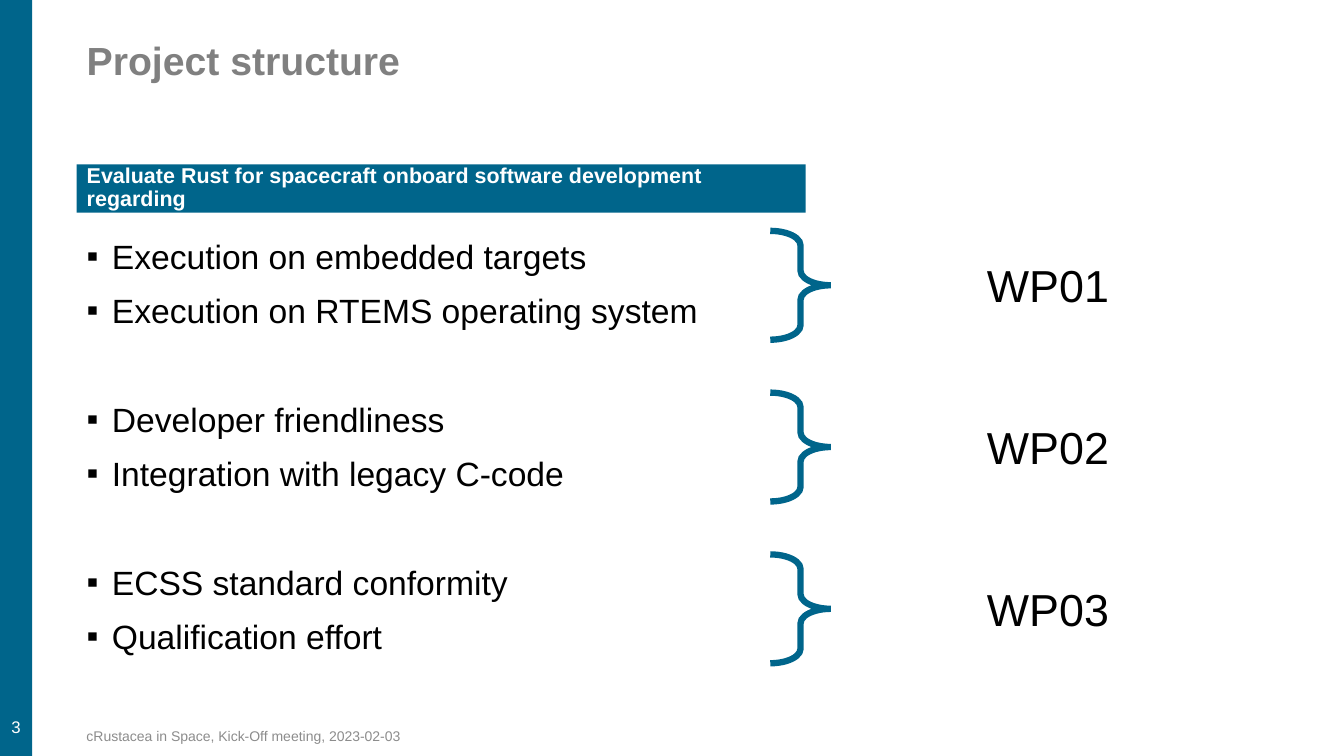
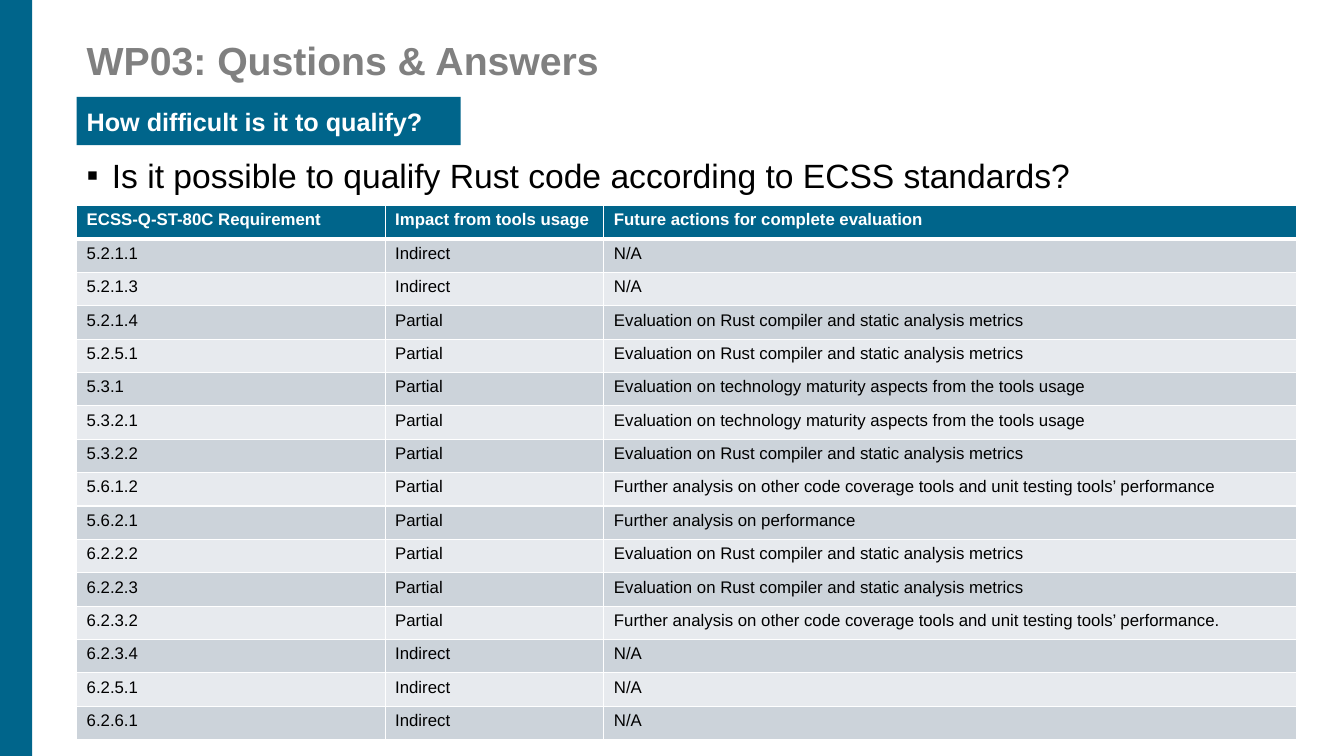
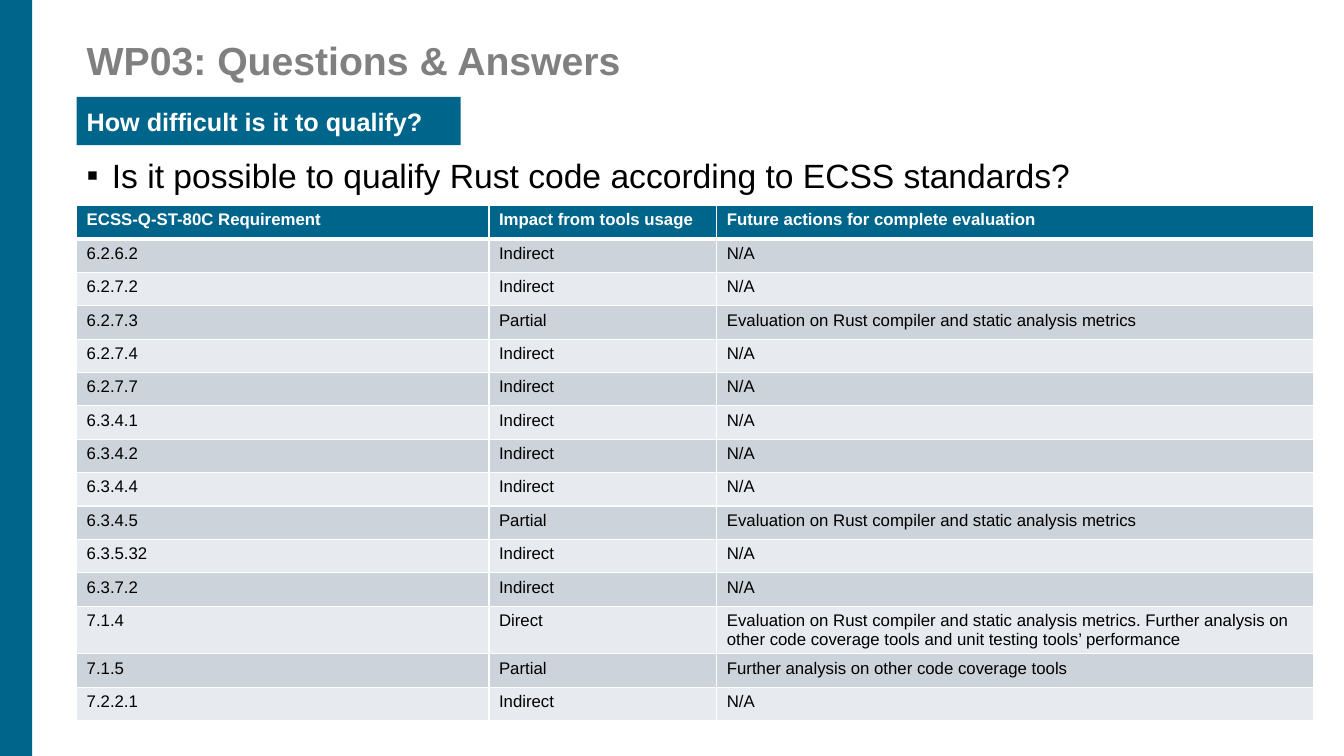
from dataclasses import dataclass

from lxml import etree
from pptx import Presentation
from pptx import util as u
from pptx.dml.color import RGBColor
from pptx.enum import shapes, text
from pptx.oxml.ns import qn


@dataclass(frozen=True)
class Theme:
    font: str = "Arial"
    # Colours
    accent: str = "00658B"
    title: str = "808080"
    footer: str = "8C8C8C"
    ink: str = "000000"
    white: str = "FFFFFF"
    rows: tuple = ("CCD3DA", "E7EAEE")
    # Type sizes in points
    title_size: float = 28
    label_size: float = 32
    list_size: float = 24
    banner_size: float = 18
    small_banner_size: float = 15.3
    cell_size: float = 12
    footer_size: float = 10
    # Layout in inches
    left: float = 0.76
    band_width: float = 0.32
    row_height: float = 5.3 / 16
    group_step: float = 3.21 / 2


T = Theme()

HEADERS = ("ECSS-Q-ST-80C Requirement", "Impact from tools usage",
           "Future actions for complete evaluation")
NONE = "N/A"
METRICS = "Evaluation on Rust compiler and static analysis metrics"
MATURITY = "Evaluation on technology maturity aspects from the tools usage"
COVERAGE = "Further analysis on other code coverage tools"
TESTING = COVERAGE + " and unit testing tools’ performance"

ROWS_FIRST = [
    ("5.2.1.1", "Indirect", NONE),
    ("5.2.1.3", "Indirect", NONE),
    ("5.2.1.4", "Partial", METRICS),
    ("5.2.5.1", "Partial", METRICS),
    ("5.3.1", "Partial", MATURITY),
    ("5.3.2.1", "Partial", MATURITY),
    ("5.3.2.2", "Partial", METRICS),
    ("5.6.1.2", "Partial", TESTING),
    ("5.6.2.1", "Partial", "Further analysis on performance"),
    ("6.2.2.2", "Partial", METRICS),
    ("6.2.2.3", "Partial", METRICS),
    ("6.2.3.2", "Partial", TESTING + "."),
    ("6.2.3.4", "Indirect", NONE),
    ("6.2.5.1", "Indirect", NONE),
    ("6.2.6.1", "Indirect", NONE),
]
ROWS_SECOND = [
    ("6.2.6.2", "Indirect", NONE),
    ("6.2.7.2", "Indirect", NONE),
    ("6.2.7.3", "Partial", METRICS),
    ("6.2.7.4", "Indirect", NONE),
    ("6.2.7.7", "Indirect", NONE),
    ("6.3.4.1", "Indirect", NONE),
    ("6.3.4.2", "Indirect", NONE),
    ("6.3.4.4", "Indirect", NONE),
    ("6.3.4.5", "Partial", METRICS),
    ("6.3.5.32", "Indirect", NONE),
    ("6.3.7.2", "Indirect", NONE),
    ("7.1.4", "Direct", METRICS + ". " + TESTING),
    ("7.1.5", "Partial", COVERAGE),
    ("7.2.2.1", "Indirect", NONE),
]
WORK_PACKAGES = [
    ("WP01", ("Execution on embedded targets",
              "Execution on RTEMS operating system")),
    ("WP02", ("Developer friendliness", "Integration with legacy C-code")),
    ("WP03", ("ECSS standard conformity", "Qualification effort")),
]


# Basic helpers
def rgb(color):
    return RGBColor.from_string(color)


def box(*lengths):
    return [u.Inches(n) for n in lengths]


def place(sp, *lengths):
    sp.left, sp.top, sp.width, sp.height = box(*lengths)


def fill(target, color):
    target.fill.solid()
    target.fill.fore_color.rgb = rgb(color)


def write(p, string, *, size, color=T.ink, bold=False, align="LEFT",
          before=0, line=1.0, bullet=None):
    """Format a paragraph and add its text."""
    indent = u.Inches(0.25) if bullet else 0
    pPr = p._p.get_or_add_pPr()
    pPr.set("marL", str(indent))
    pPr.set("indent", str(-indent))
    p.alignment = getattr(text.PP_ALIGN, align)
    p.space_before = u.Pt(before)
    p.line_spacing = line
    if bullet:
        etree.SubElement(pPr, qn("a:buFont")).set("typeface", T.font)
        etree.SubElement(pPr, qn("a:buChar")).set("char", bullet)
    else:
        etree.SubElement(pPr, qn("a:buNone"))
    r = p.add_run()
    r.text = string
    r.font.name, r.font.size, r.font.bold = T.font, u.Pt(size), bold
    r.font.color.rgb = rgb(color)


def frame(sp, anchor="TOP"):
    tf = sp.text_frame
    tf.auto_size = text.MSO_AUTO_SIZE.NONE
    tf.word_wrap = True
    tf.vertical_anchor = getattr(text.MSO_ANCHOR, anchor)
    return tf


# Elements
def add_label(s, string, at, anchor="TOP", **fmt):
    tf = frame(s.shapes.add_textbox(*box(*at)), anchor)
    write(tf.paragraphs[0], string, **fmt)
    return tf


def add_band(s):
    """Draw the side band behind everything else on the slide."""
    sp = s.shapes.add_shape(shapes.MSO_SHAPE.RECTANGLE,
                            *box(0, 0, T.band_width, 7.5))
    sp.shadow.inherit = False
    fill(sp, T.accent)
    sp.line.fill.background()
    s.shapes.element.insert(2, sp.element)


def add_slide(prs, title):
    s = prs.slides.add_slide(prs.slide_layouts.get_by_name("Two Content"))
    add_band(s)
    sp = s.shapes.title
    place(sp, T.left, 0.36, 11, 1.08)
    write(frame(sp).paragraphs[0], title, size=T.title_size, color=T.title,
          bold=True, line=0.9)
    return s


def set_banner(s, string, top, width, size, line=1.0):
    sp = s.placeholders[2]
    place(sp, T.left, top, width, 0.48)
    fill(sp, T.accent)
    write(frame(sp, "MIDDLE").paragraphs[0], string, size=size,
          color=T.white, bold=True, line=line)


def set_list(s, groups, at, line=1.0):
    """Bulleted groups, set apart by the height of one line."""
    sp = s.placeholders[1]
    place(sp, *at)
    tf = frame(sp)
    for g, items in enumerate(groups):
        for i, item in enumerate(items):
            first = g == i == 0
            p = tf.paragraphs[0] if first else tf.add_paragraph()
            before = 0 if first else 10 if i else 48.8
            write(p, item, size=T.list_size, before=before, line=line,
                  bullet="▪")


def add_brace(s, *at):
    sp = s.shapes.add_shape(shapes.MSO_SHAPE.RIGHT_BRACE, *box(*at))
    sp.adjustments[0], sp.adjustments[1] = 0.24, 0.5
    sp.shadow.inherit = False
    sp.fill.background()
    sp.line.color.rgb = rgb(T.accent)
    sp.line.width = u.Pt(4.5)
    # Sharp corners give the brace a flat tip
    ln = sp.element.spPr.find(qn("a:ln"))
    etree.SubElement(ln, qn("a:miter")).set("lim", "800000")


def set_borders(cell, **widths):
    """Draw white cell borders; they come before the fill in the XML."""
    tcPr = cell._tc.get_or_add_tcPr()
    for i, (side, width) in enumerate(widths.items()):
        ln = etree.Element(qn("a:ln" + side), w=str(u.Pt(width)))
        solid = etree.SubElement(ln, qn("a:solidFill"))
        etree.SubElement(solid, qn("a:srgbClr")).set("val", T.white)
        tcPr.insert(i, ln)


def add_table(s, rows, widths):
    data = [HEADERS, *rows]
    at = box(T.left, 2.04, sum(widths), T.row_height * len(data))
    table = s.shapes.add_table(len(data), len(widths), *at).table
    for column, width in zip(table.columns, widths):
        column.width = u.Inches(width)
    for y, values in enumerate(data):
        table.rows[y].height = u.Inches(T.row_height)
        head = y == 0
        for x, value in enumerate(values):
            cell = table.cell(y, x)
            fill(cell, T.accent if head else T.rows[(y - 1) % 2])
            set_borders(cell, L=1, R=1, T=3 if y == 1 else 1,
                        B=3 if head else 1)
            write(cell.text_frame.paragraphs[0], value, size=T.cell_size,
                  color=T.white if head else T.ink, bold=head)


# Slides
def structure_slide(prs):
    s = add_slide(prs, "Project structure")
    set_banner(s, "Evaluate Rust for spacecraft onboard software development "
               "regarding", 1.63, 7.23, T.small_banner_size, line=0.9)
    set_list(s, [items for _, items in WORK_PACKAGES],
             (T.left, 2.29, 6.41, 4.84))
    for i, (name, _) in enumerate(WORK_PACKAGES):
        top = 2.29 + T.group_step * i
        add_brace(s, 7.64, top, 0.6, 1.08)
        add_label(s, name, (9.69, top + 0.22, 1.59, 0.64), size=T.label_size)
    # Footer and page number
    add_label(s, "cRustacea in Space, Kick-Off meeting, 2023-02-03",
              (T.left, 7.16, 4.5, 0.28), "MIDDLE", size=T.footer_size,
              color=T.footer)
    tf = add_label(s, "3", (0, 5.84, T.band_width, 1.57), "BOTTOM",
                   size=T.cell_size, color=T.white, align="CENTER")
    tf.margin_left = tf.margin_right = u.Inches(0.04)
    tf.margin_top = tf.margin_bottom = u.Inches(0.1)


def answers_slide(prs, title, rows, widths):
    s = add_slide(prs, title)
    set_banner(s, "How difficult is it to qualify?", 0.96, 3.81,
               T.banner_size)
    set_list(s, [["Is it possible to qualify Rust code according to ECSS "
                  "standards?"]], (T.left, 1.53, 10.25, 0.48), line=0.9)
    add_table(s, rows, widths)


def main():
    prs = Presentation()
    prs.slide_width, prs.slide_height = box(13.33, 7.5)
    structure_slide(prs)
    answers_slide(prs, "WP03: Qustions & Answers", ROWS_FIRST,
                  (3.06, 2.17, 6.87))
    answers_slide(prs, "WP03: Questions & Answers", ROWS_SECOND,
                  (4.09, 2.26, 5.92))
    prs.save("out.pptx")


if __name__ == "__main__":
    main()
